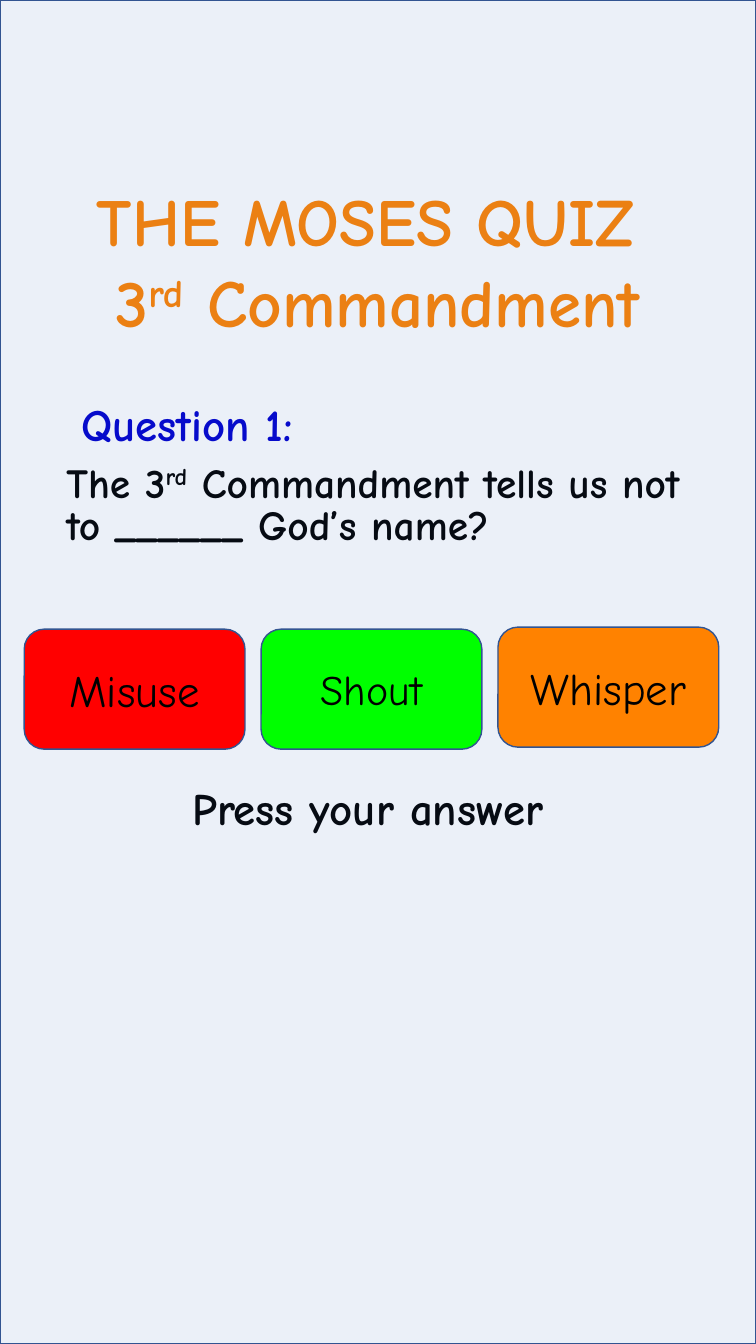
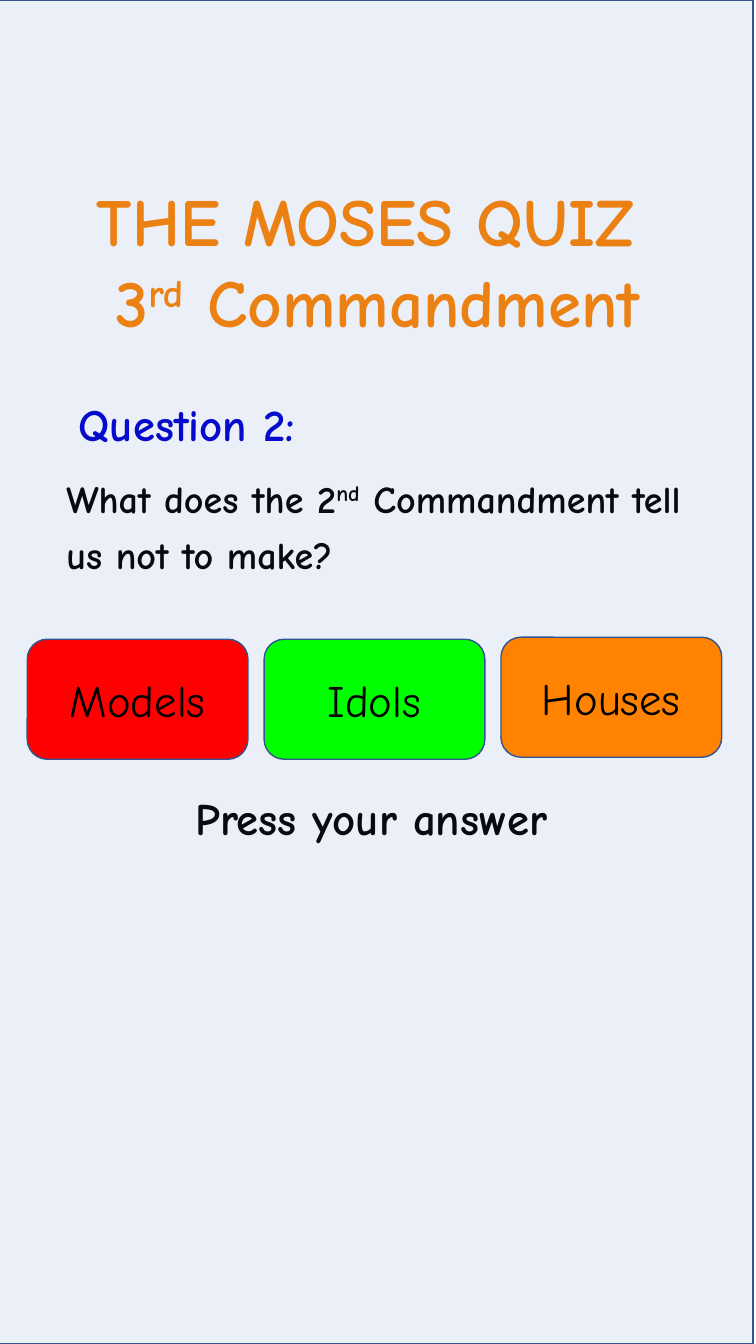
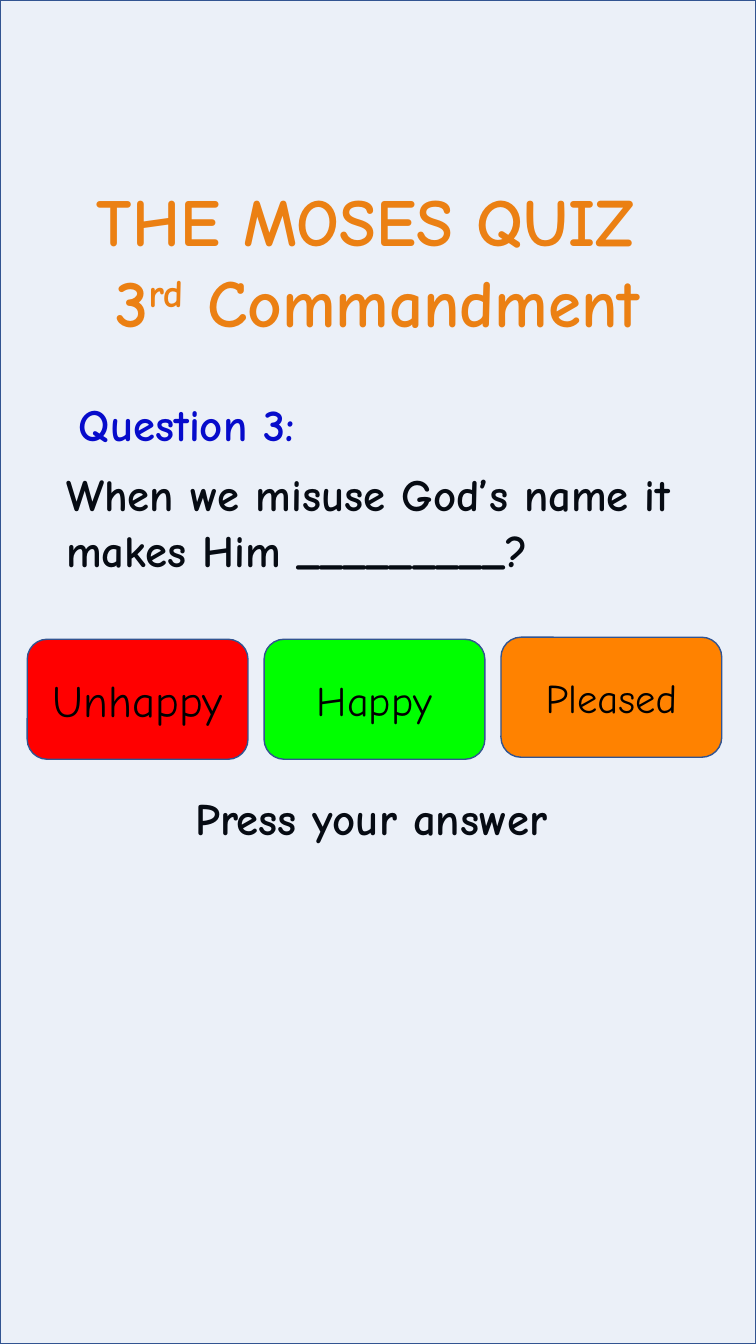
import pptx
import pptx.dml.color
import pptx.enum.shapes
import pptx.enum.text
import pptx.oxml
import pptx.oxml.ns
import pptx.util
from pptx.util import Inches

FONT = "Comic Neue"
BLACK = "000000"
TITLE_ORANGE = "FF8200"
QUESTION_BLUE = "0000CC"
TINT_BLUE = "4472C4"
OUTLINE_BLUE = "325491"
ANSWER_FILLS = ("FF0000", "00FF00", TITLE_ORANGE)

PAGE_W, PAGE_H = 7.5, 13.33
ANSWER_W, ANSWER_H, ANSWER_PITCH = 2.19, 1.19, 2.35
LAST_ANSWER_LIFT = 0.02
CENTER = pptx.enum.text.PP_ALIGN.CENTER

# Superscripts stand between ^ marks; each answer is (word, size).
QUESTIONS = [
    dict(question="The 3^rd^ Commandment tells us not to ______ God’s name?",
         size=29.6, leading=30, height=1.19, tint_left=0, answers_at=(0.24, 6.24),
         answers=[("Misuse", 32), ("Shout", 30), ("Whisper", 32)]),
    dict(question="What does the 2^nd^ Commandment tell us not to make?",
         size=27.2, leading=40, height=1.46, tint_left=-0.03, answers_at=(0.27, 6.34),
         answers=[("Models", 32), ("Idols", 32), ("Houses", 32)]),
    dict(question="When we misuse God’s name it makes Him _________?",
         size=32, leading=40, height=1.46, tint_left=0, answers_at=(0.27, 6.34),
         answers=[("Unhappy", 32), ("Happy", 30), ("Pleased", 29)]),
]


def rgb(hex_color):
    return pptx.dml.color.RGBColor.from_string(hex_color)


def write(paragraph, text, size, color=BLACK, bold=True):
    """Fill a paragraph, raising the parts that stand between ^ marks."""
    for index, part in enumerate(text.split("^")):
        run = paragraph.add_run()
        run.text = part
        run.font.name = FONT
        run.font.size = pptx.util.Pt(size)
        run.font.bold = bold
        run.font.color.rgb = rgb(color)
        if index % 2:
            run.font._element.set("baseline", "30000")


def add_text(slide, box, lines, size, color=BLACK, align=None, wrap=True,
             leading=None, before=None):
    frame = slide.shapes.add_textbox(*map(Inches, box)).text_frame
    frame.word_wrap = wrap
    for index, line in enumerate(lines):
        paragraph = frame.add_paragraph() if index else frame.paragraphs[0]
        paragraph.alignment = align
        paragraph.line_spacing = leading
        paragraph.space_before = before
        write(paragraph, line, size, color)


def add_panel(slide, kind, box, fill):
    panel = slide.shapes.add_shape(kind, *map(Inches, box))
    panel.shadow.inherit = False
    panel.fill.solid()
    panel.fill.fore_color.rgb = rgb(fill)
    panel.line.color.rgb = rgb(OUTLINE_BLUE)
    panel.line.width = pptx.util.Pt(1)
    return panel


def add_title(slide, left, top):
    add_text(slide, (left, top, 6.89, 1.72),
             ["THE MOSES QUIZ ", "3^rd^ Commandment"],
             48, TITLE_ORANGE, CENTER, wrap=False)


def add_question(slide, left, top, number, content):
    add_text(slide, (left, top, 2.77, 0.64), [f"Question {number}:"],
             32, QUESTION_BLUE, CENTER, wrap=False)
    add_text(slide, (left + 0.09, top + 0.67, 6.36, content["height"]),
             [content["question"]], content["size"],
             leading=pptx.util.Pt(content["leading"]), before=pptx.util.Pt(7.5))


def add_prompt(slide, left, top):
    add_text(slide, (left, top, 4.22, 0.72), ["Press your answer"], 32,
             leading=0.9, before=pptx.util.Pt(7.5))


def add_tint(slide, left):
    """Lay a faint blue film over the page and its text."""
    tint = add_panel(slide, pptx.enum.shapes.MSO_SHAPE.RECTANGLE,
                     (left, 0, PAGE_W, PAGE_H), TINT_BLUE)
    solid_fill = tint._element.spPr.find(pptx.oxml.ns.qn("a:solidFill"))
    solid_fill[0].append(pptx.oxml.parse_xml(
        f'<a:alpha {pptx.oxml.ns.nsdecls("a")} val="10000"/>'))


def add_answers(slide, left, top, answers):
    for index, ((word, size), fill) in enumerate(zip(answers, ANSWER_FILLS)):
        lift = LAST_ANSWER_LIFT if index == len(answers) - 1 else 0
        box = (left + index * ANSWER_PITCH, top - lift, ANSWER_W, ANSWER_H)
        button = add_panel(
            slide, pptx.enum.shapes.MSO_SHAPE.ROUNDED_RECTANGLE, box, fill)
        button.text_frame.vertical_anchor = pptx.enum.text.MSO_ANCHOR.MIDDLE
        paragraph = button.text_frame.paragraphs[0]
        paragraph.alignment = CENTER
        write(paragraph, word, size, bold=False)


def add_quiz_slide(deck, number, content):
    slide = deck.slides.add_slide(deck.slide_layouts[6])
    left, top = content["answers_at"]
    add_title(slide, 0.3, 1.73)
    add_question(slide, 0.47, 3.89, number, content)
    add_prompt(slide, left + 1.57, top + 1.51)
    add_tint(slide, content["tint_left"])
    add_answers(slide, left, top, content["answers"])


def main():
    deck = pptx.Presentation()
    deck.slide_width, deck.slide_height = Inches(PAGE_W), Inches(PAGE_H)
    for number, content in enumerate(QUESTIONS, 1):
        add_quiz_slide(deck, number, content)
    deck.save("out.pptx")


if __name__ == "__main__":
    main()
